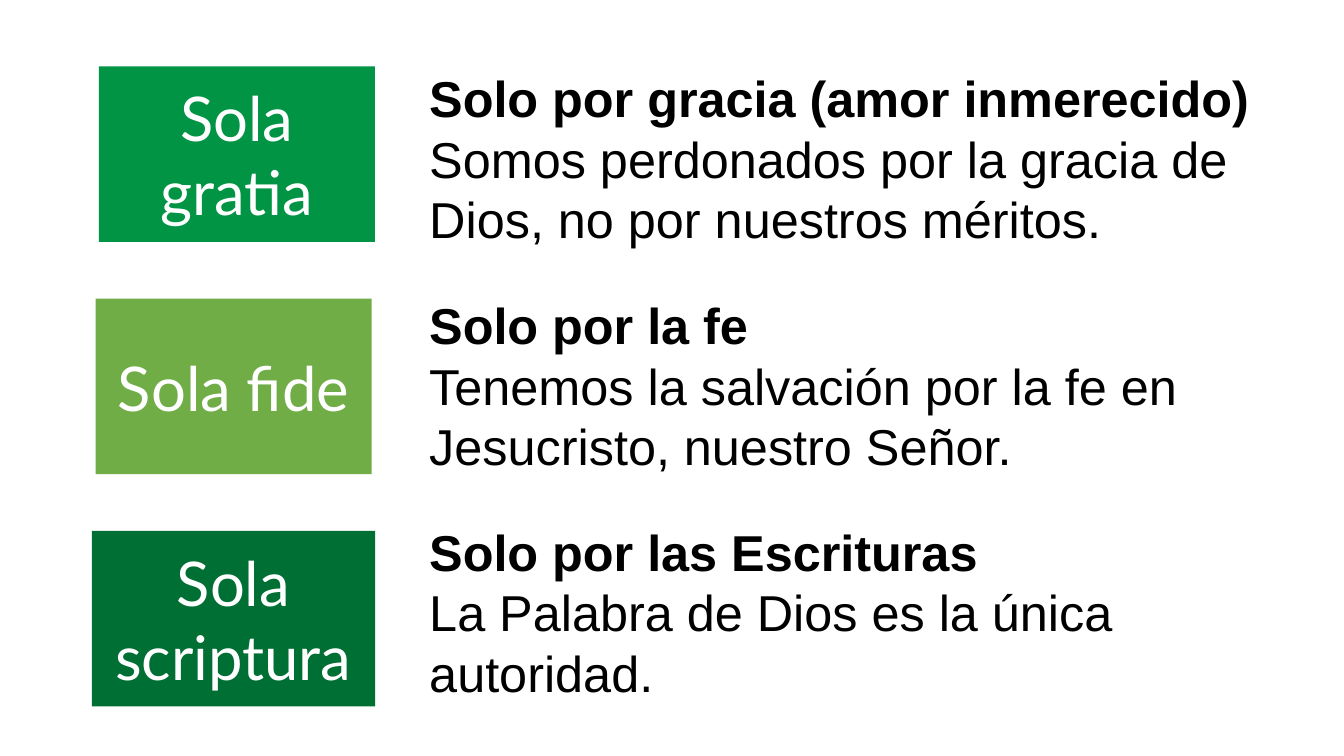
from pptx import Presentation
from pptx.dml.color import RGBColor
from pptx.enum.shapes import MSO_SHAPE
from pptx.enum.text import MSO_ANCHOR, MSO_AUTO_SIZE, PP_ALIGN
from pptx.util import Pt

RECT = MSO_SHAPE.RECTANGLE
MIDDLE = MSO_ANCHOR.MIDDLE
GROW = MSO_AUTO_SIZE.SHAPE_TO_FIT_TEXT
CENTER = PP_ALIGN.CENTER

GREEN = RGBColor(0x00, 0x94, 0x44)
LIME = RGBColor(0x70, 0xAD, 0x47)
FOREST = RGBColor(0x00, 0x6F, 0x33)
WHITE = RGBColor(0xFF, 0xFF, 0xFF)
BLACK = RGBColor(0x00, 0x00, 0x00)

SOLAS = [
    {"label": "Sola gratia", "fill": GREEN, "left": 70.6, "width": 197.3,
     "paras": [[("Solo por gracia (amor inmerecido) ", True),
                ("Somos perdonados por la gracia de Dios, no por nuestros méritos.", False)]]},
    {"label": "Sola fide", "fill": LIME, "left": 68.3, "width": 197.3,
     "paras": [[("Solo por la fe", True)],
               [("Tenemos la salvación por la fe en Jesucristo, nuestro Señor.", False)]]},
    {"label": "Sola scriptura", "fill": FOREST, "left": 65.6, "width": 202.3,
     "paras": [[("Solo por las Escrituras", True)],
               [("La Palabra de Dios es la única autoridad.", False)]]},
]

TILE = {"top": 47.5, "step": 165.9, "height": 125.3}
NOTE = {"top": 44.6, "step": 162, "height": 138.2, "left": 299.5, "width": 627.8}

INSET = Pt(9.4)
TILE_FRAME = {"word_wrap": True, "vertical_anchor": MIDDLE,
              "margin_left": INSET, "margin_right": INSET,
              "margin_top": INSET, "margin_bottom": INSET}
NOTE_FRAME = {"word_wrap": True, "auto_size": GROW}
TILE_FONT = {"name": "Lato", "size": Pt(44)}
NOTE_FONT = {"name": "Arial", "size": Pt(36)}


def apply(target, values):
    for key, value in values.items():
        setattr(target, key, value)


def add_run(para, text, font, color):
    run = para.add_run()
    run.text = text
    apply(run.font, font)
    run.font.color.rgb = color


def place(grid, row, left, width):
    top = grid["top"] + row * grid["step"]
    return [Pt(size) for size in (left, top, width, grid["height"])]


def add_tile(slide, row, sola):
    tile = slide.shapes.add_shape(RECT, *place(TILE, row, sola["left"], sola["width"]))
    tile.shadow.inherit = False
    tile.fill.solid()
    tile.fill.fore_color.rgb = sola["fill"]
    tile.line.fill.background()
    apply(tile.text_frame, TILE_FRAME)
    para = tile.text_frame.paragraphs[0]
    para.alignment = CENTER
    add_run(para, sola["label"], TILE_FONT, WHITE)


def add_note(slide, row, sola):
    note = slide.shapes.add_textbox(*place(NOTE, row, NOTE["left"], NOTE["width"]))
    frame = note.text_frame
    apply(frame, NOTE_FRAME)
    for index, runs in enumerate(sola["paras"]):
        para = frame.add_paragraph() if index else frame.paragraphs[0]
        for text, bold in runs:
            add_run(para, text, {**NOTE_FONT, "bold": bold}, BLACK)


def main():
    deck = Presentation()
    apply(deck, {"slide_width": Pt(960), "slide_height": Pt(540)})
    slide = deck.slides.add_slide(deck.slide_layouts[6])
    for add in (add_tile, add_note):
        for row, sola in enumerate(SOLAS):
            add(slide, row, sola)
    deck.save("out.pptx")


if __name__ == "__main__":
    main()
